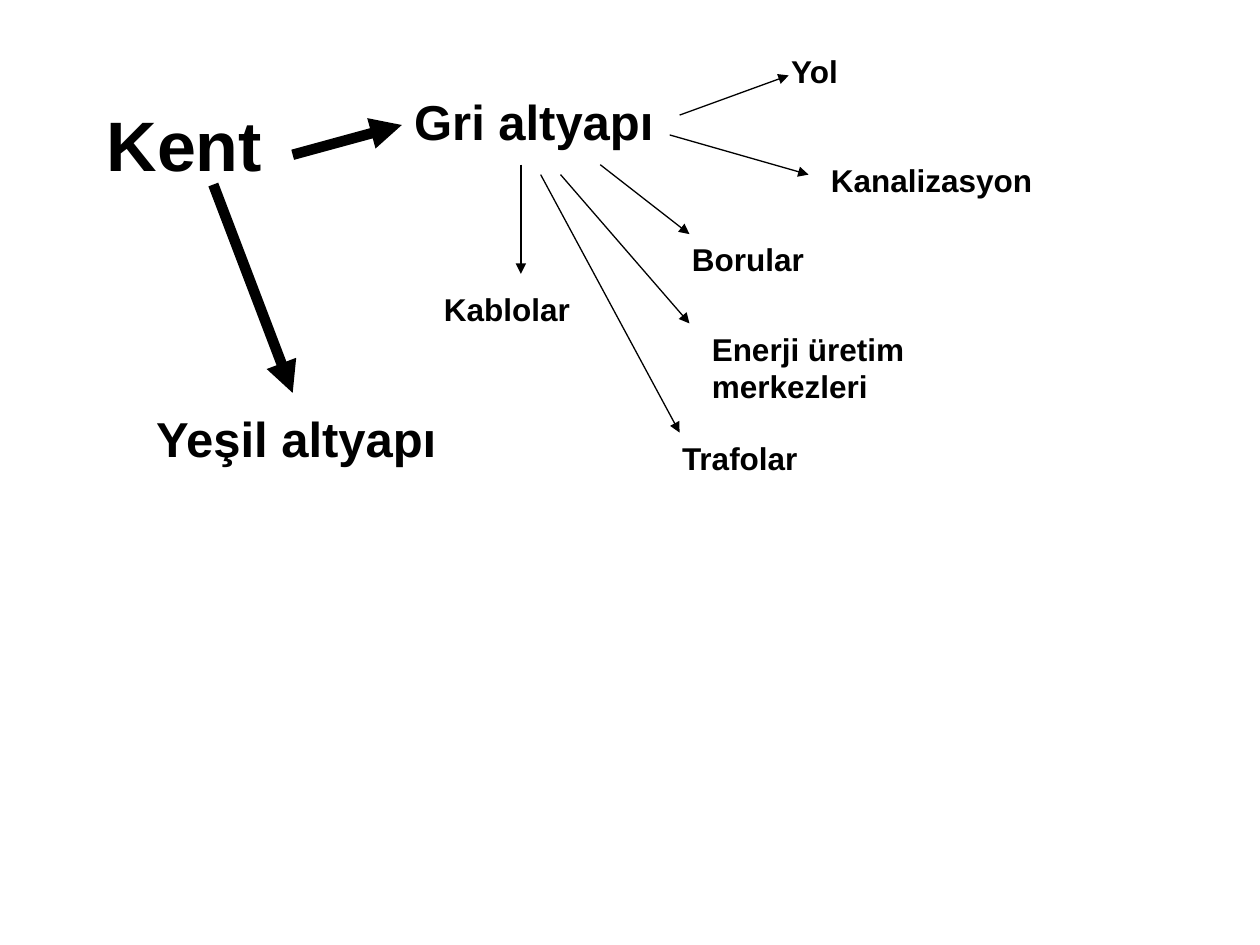
import pptx
import pptx.dml.color
import pptx.enum.shapes
import pptx.enum.text
import pptx.oxml.ns
import pptx.util
from lxml import etree
from pptx.util import Cm

COLORS = {"ink": "000000", "background": "FFFFFF"}
FONT = "Arial"
BRANCHES = [
    ("Yol", (7.6, 0, 5.6, 1.02), (5.6, 1.4), (7.8, 0.6)),
    ("Kanalizasyon", (8.4, 2.2, 5.6, 1.02), (5.4, 1.8), (8.2, 2.6)),
    ("Enerji üretim merkezleri", (6, 5.6, 6, 1.78), (3.2, 2.6), (5.8, 5.6)),
    ("Trafolar", (5.4, 7.8, 5.8, 1.02), (2.8, 2.6), (5.6, 7.8)),
    ("Kablolar", (0.6, 4.8, 4, 1.02), (2.4, 2.4), (2.4, 4.6)),
    ("Borular", (5.6, 3.8, 4.8, 1.02), (4, 2.4), (5.8, 3.8)),
]


def rgb(name):
    """Return the named palette colour."""
    return pptx.dml.color.RGBColor.from_string(COLORS[name])


def add_text(slide, text, origin, box, size=18, bold=True, color="ink"):
    """Place a label in a box measured in centimetres from the origin."""
    left, top, width, height = box
    label = slide.shapes.add_textbox(
        Cm(origin[0] + left), Cm(origin[1] + top), Cm(width), Cm(height))
    frame = label.text_frame
    frame.word_wrap = True
    frame.auto_size = pptx.enum.text.MSO_AUTO_SIZE.SHAPE_TO_FIT_TEXT
    run = frame.paragraphs[0].add_run()
    run.text = text
    run.font.name = FONT
    run.font.size = pptx.util.Pt(size)
    run.font.bold = bold
    run.font.color.rgb = rgb(color)


def add_arrow(slide, origin, start, end, weight=0.75):
    """Draw an arrow between two points measured from the origin."""
    x, y = origin
    arrow = slide.shapes.add_connector(
        pptx.enum.shapes.MSO_CONNECTOR.STRAIGHT,
        Cm(x + start[0]), Cm(y + start[1]), Cm(x + end[0]), Cm(y + end[1]))
    arrow.line.color.rgb = rgb("ink")
    arrow.line.width = pptx.util.Pt(weight)
    qn = pptx.oxml.ns.qn
    etree.SubElement(arrow.line._get_or_add_ln(), qn("a:tailEnd"), type="triangle")
    etree.SubElement(arrow._element.spPr, qn("a:effectLst"))


def add_city(slide, origin):
    """Place the city, its green infrastructure and the two heavy arrows."""
    add_text(slide, "Kent", origin, (0, 0, 6.2, 1.95), size=40)
    add_text(slide, "Yeşil altyapı", origin, (1, 6.2, 6.4, 1.44), size=28)
    add_arrow(slide, origin, (2.4, 1.8), (4, 6), weight=6)
    add_arrow(slide, origin, (4, 1.2), (6.2, 0.6), weight=6)


def add_grey_infrastructure(slide, origin):
    """Place the grey infrastructure heading and its branches."""
    add_text(slide, "Gri altyapı", origin, (0, 0.8, 6.8, 1.44), size=28)
    for name, box, start, end in BRANCHES:
        add_text(slide, name, origin, box)
        add_arrow(slide, origin, start, end)


def main():
    """Build and save the slide."""
    deck = pptx.Presentation()
    deck.slide_width, deck.slide_height = Cm(25.4), Cm(19.05)
    slide = deck.slides.add_slide(deck.slide_layouts[6])
    slide.background.fill.solid()
    slide.background.fill.fore_color.rgb = rgb("background")
    add_city(slide, (1.9, 1.92))
    add_grey_infrastructure(slide, (8.1, 0.92))
    deck.save("out.pptx")


if __name__ == "__main__":
    main()
